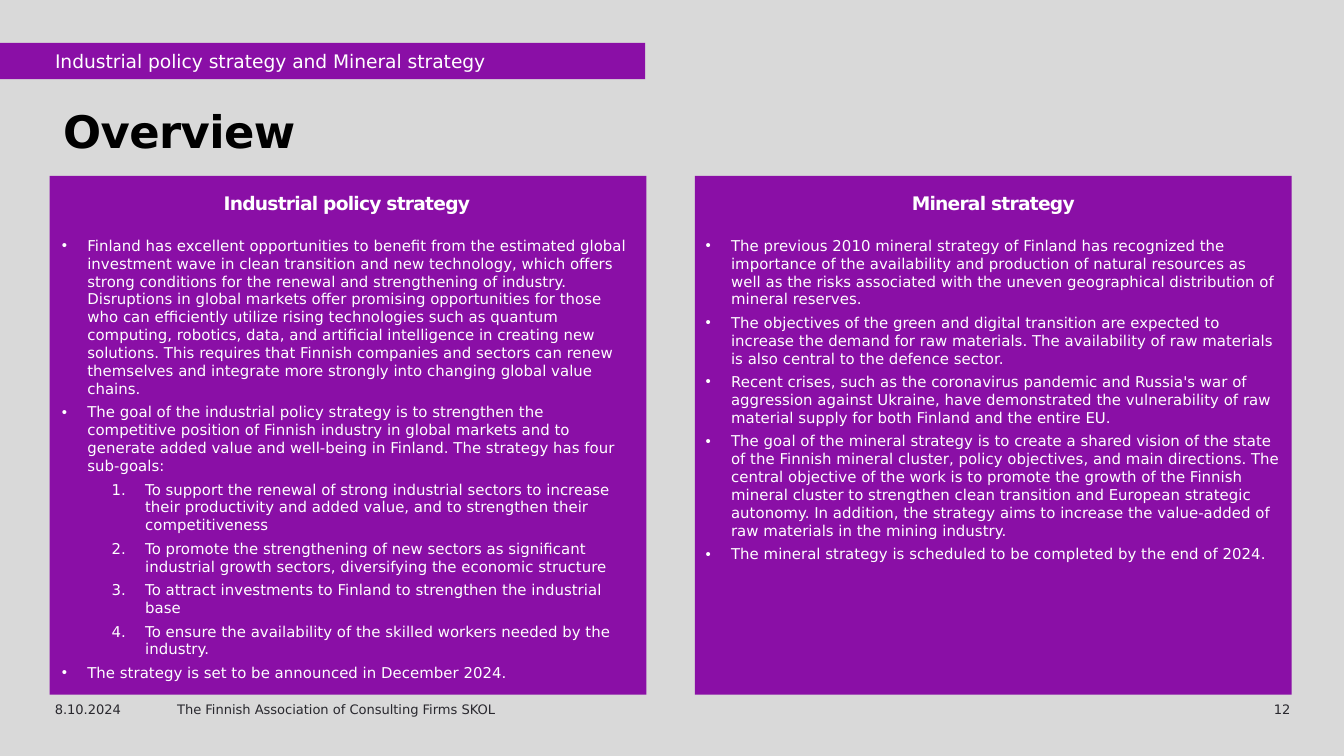
from dataclasses import dataclass

import pptx
import pptx.dml.color
import pptx.enum.shapes
import pptx.enum.text
import pptx.oxml.ns
import pptx.util
from lxml import etree
from pptx.util import Inches

RGBColor = pptx.dml.color.RGBColor
Align = pptx.enum.text.PP_ALIGN
Anchor = pptx.enum.text.MSO_ANCHOR

GREY = RGBColor(0xD9, 0xD9, 0xD9)
PURPLE = RGBColor(0x8A, 0x0F, 0xA6)
WHITE = RGBColor(0xFF, 0xFF, 0xFF)
BLACK = RGBColor(0x00, 0x00, 0x00)
FOOTER_GREY = RGBColor(0x29, 0x28, 0x2E)
FONT = "DejaVu Sans"
PANEL_TOP = 1.31
PANEL_WIDTH = 4.44
PANEL_HEIGHT = 3.86


@dataclass
class Box:
    left: float
    top: float
    width: float
    height: float


@dataclass
class Style:
    size: float
    color: RGBColor
    bold: bool = False
    tracking: int = 0
    align: Align = Align.LEFT


@dataclass
class Point:
    text: str
    numbered: bool = False


@dataclass
class Panel:
    left: float
    heading: str
    heading_box: Box
    body_box: Box
    points: list[Point]


@dataclass
class FooterItem:
    text: str
    box: Box
    align: Align = Align.LEFT


HEADING = Style(10, WHITE, True, -40, Align.CENTER)
BODY = Style(8, WHITE)

PANELS = [
    Panel(0.37, "Industrial policy strategy", Box(0.37, 1.35, 4.42, 0.32), Box(0.38, 1.71, 4.41, 3.45), [
        Point("Finland has excellent opportunities to benefit from the estimated global investment wave "
              "in clean transition and new technology, which offers strong conditions for the renewal and "
              "strengthening of industry. Disruptions in global markets offer promising opportunities for "
              "those who can efficiently utilize rising technologies such as quantum computing, robotics, "
              "data, and artificial intelligence in creating new solutions. This requires that Finnish "
              "companies and sectors can renew themselves and integrate more strongly into changing global "
              "value chains."),
        Point("The goal of the industrial policy strategy is to strengthen the competitive position of "
              "Finnish industry in global markets and to generate added value and well-being in Finland. "
              "The strategy has four sub-goals:"),
        Point("To support the renewal of strong industrial sectors to increase their productivity and "
              "added value, and to strengthen their competitiveness", True),
        Point("To promote the strengthening of new sectors as significant industrial growth sectors, "
              "diversifying the economic structure", True),
        Point("To attract investments to Finland to strengthen the industrial base", True),
        Point("To ensure the availability of the skilled workers needed by the industry.", True),
        Point("The strategy is set to be announced in December 2024."),
    ]),
    Panel(5.17, "Mineral strategy", Box(5.17, 1.31, 4.44, 0.4), Box(5.17, 1.71, 4.44, 2.56), [
        Point("The previous 2010 mineral strategy of Finland has recognized the importance of the "
              "availability and production of natural resources as well as the risks associated with the "
              "uneven geographical distribution of mineral reserves."),
        Point("The objectives of the green and digital transition are expected to increase the demand for "
              "raw materials. The availability of raw materials is also central to the defence sector."),
        Point("Recent crises, such as the coronavirus pandemic and Russia's war of aggression against "
              "Ukraine, have demonstrated the vulnerability of raw material supply for both Finland and "
              "the entire EU."),
        Point("The goal of the mineral strategy is to create a shared vision of the state of the Finnish "
              "mineral cluster, policy objectives, and main directions. The central objective of the work "
              "is to promote the growth of the Finnish mineral cluster to strengthen clean transition and "
              "European strategic autonomy. In addition, the strategy aims to increase the value-added of "
              "raw materials in the mining industry."),
        Point("The mineral strategy is scheduled to be completed by the end of 2024."),
    ]),
]

FOOTER = [
    FooterItem("8.10.2024", Box(0.31, 5.17, 1, 0.18)),
    FooterItem("The Finnish Association of Consulting Firms SKOL", Box(1.22, 5.17, 3.6, 0.18)),
    FooterItem("12", Box(8.76, 5.17, 0.94, 0.18), Align.RIGHT),
]


def lengths(box: Box) -> list[int]:
    return [Inches(value) for value in (box.left, box.top, box.width, box.height)]


def add_bar(slide, box: Box):
    shape = slide.shapes.add_shape(pptx.enum.shapes.MSO_SHAPE.RECTANGLE, *lengths(box))
    shape.shadow.inherit = False
    shape.fill.solid()
    shape.fill.fore_color.rgb = PURPLE
    shape.line.fill.background()
    return shape


def add_text_box(slide, box: Box, anchor: Anchor = Anchor.TOP, side_margin: float = 0.1):
    shape = slide.shapes.add_textbox(*lengths(box))
    frame = shape.text_frame
    frame.word_wrap = True
    frame.vertical_anchor = anchor
    frame.margin_left = frame.margin_right = Inches(side_margin)
    return frame


def write(paragraph, text: str, style: Style) -> None:
    paragraph.alignment = style.align
    run = paragraph.add_run()
    run.text = text
    run.font.name = FONT
    run.font.size = pptx.util.Pt(style.size)
    run.font.bold = style.bold
    run.font.color.rgb = style.color
    if style.tracking:
        run.font._element.set("spc", str(style.tracking))


def set_bullet(paragraph, numbered: bool) -> None:
    properties = paragraph._p.get_or_add_pPr()
    indent, hanging = (0.62, 0.25) if numbered else (0.19, 0.19)
    properties.set("marL", str(Inches(indent)))
    properties.set("indent", str(-Inches(hanging)))
    if numbered:
        paragraph.level = 1
        etree.SubElement(properties, pptx.oxml.ns.qn("a:buFont"), typeface="+mj-lt")
        etree.SubElement(properties, pptx.oxml.ns.qn("a:buAutoNum"), type="arabicPeriod")
    else:
        etree.SubElement(properties, pptx.oxml.ns.qn("a:buFont"), typeface="Arial")
        etree.SubElement(properties, pptx.oxml.ns.qn("a:buChar"), char="•")


def add_panel(slide, panel: Panel) -> None:
    add_bar(slide, Box(panel.left, PANEL_TOP, PANEL_WIDTH, PANEL_HEIGHT))
    heading = add_text_box(slide, panel.heading_box, Anchor.MIDDLE)
    write(heading.paragraphs[0], panel.heading, HEADING)
    body = add_text_box(slide, panel.body_box, side_margin=0.08)
    for index, point in enumerate(panel.points):
        paragraph = body.add_paragraph() if index else body.paragraphs[0]
        set_bullet(paragraph, point.numbered)
        paragraph.space_after = pptx.util.Pt(3)
        write(paragraph, point.text, BODY)


def add_title(slide) -> None:
    title = slide.shapes.title
    title.left, title.top, title.width, title.height = lengths(Box(0.37, 0.75, 9.29, 0.4))
    title.text_frame.vertical_anchor = Anchor.TOP
    title.text_frame.word_wrap = True
    title.text_frame.auto_size = pptx.enum.text.MSO_AUTO_SIZE.NONE
    paragraph = title.text_frame.paragraphs[0]
    paragraph.line_spacing = pptx.util.Pt(27)
    write(paragraph, "Overview", Style(24, BLACK, True, -30))


def main() -> None:
    presentation = pptx.Presentation()
    presentation.slide_width = Inches(10)
    presentation.slide_height = presentation.slide_width * 9 // 16
    slide = presentation.slides.add_slide(presentation.slide_layouts[5])
    slide.background.fill.solid()
    slide.background.fill.fore_color.rgb = GREY
    add_title(slide)
    section = add_bar(slide, Box(0, 0.32, 4.8, 0.27)).text_frame
    section.margin_left = Inches(0.41)
    section.vertical_anchor = Anchor.MIDDLE
    write(section.paragraphs[0], "Industrial policy strategy and Mineral strategy", Style(10, WHITE))
    for panel in PANELS:
        add_panel(slide, panel)
    for item in FOOTER:
        write(add_text_box(slide, item.box).paragraphs[0], item.text, Style(7, FOOTER_GREY, align=item.align))
    presentation.save("out.pptx")


if __name__ == "__main__":
    main()
